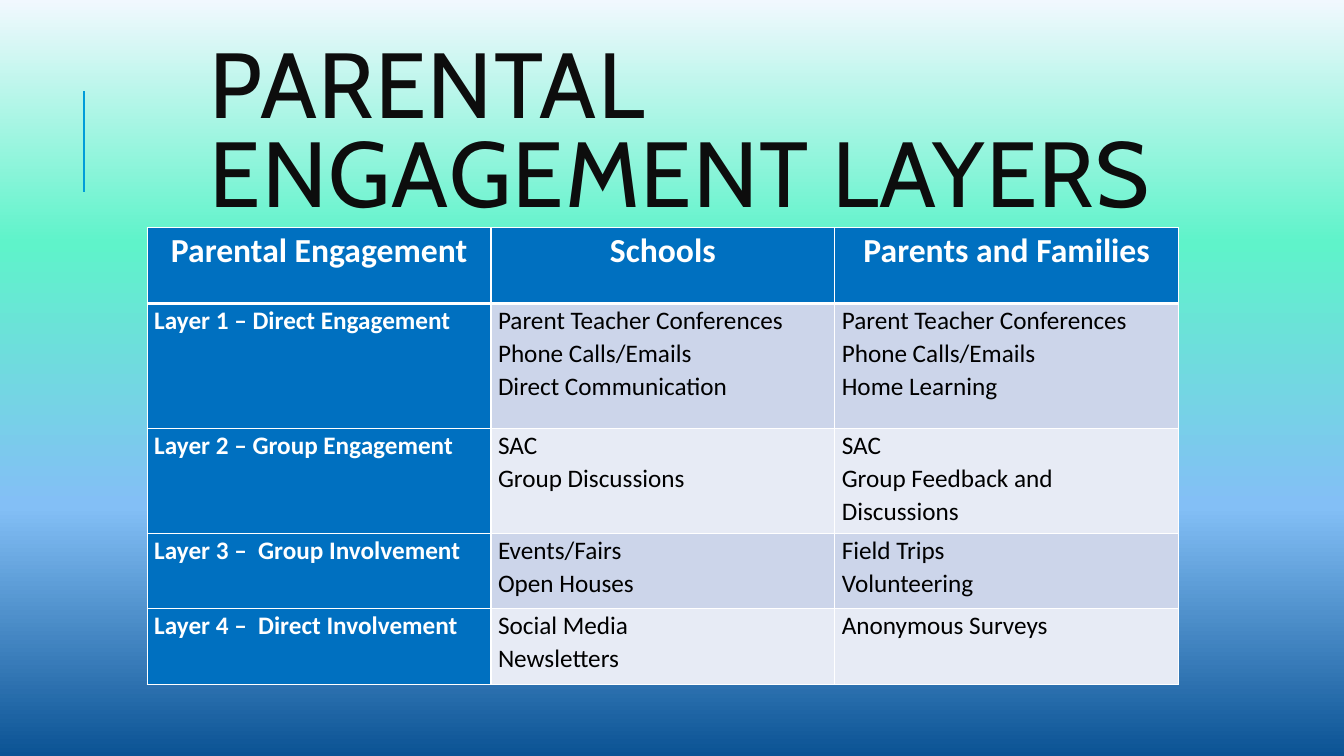
from lxml import etree
from pptx import Presentation
from pptx.dml.color import RGBColor
from pptx.enum.shapes import MSO_CONNECTOR
from pptx.enum.text import MSO_ANCHOR, MSO_AUTO_SIZE, PP_ALIGN
from pptx.oxml.ns import qn
from pptx.util import Inches, Pt

STRAIGHT = MSO_CONNECTOR.STRAIGHT
TOP, MIDDLE = MSO_ANCHOR.TOP, MSO_ANCHOR.MIDDLE
LEFT, CENTER = PP_ALIGN.LEFT, PP_ALIGN.CENTER
NO_AUTOFIT = MSO_AUTO_SIZE.NONE

WHITE = RGBColor(0xFF, 0xFF, 0xFF)
BLACK = RGBColor(0x00, 0x00, 0x00)
TITLE_INK = RGBColor(0x0D, 0x0D, 0x0D)
ACCENT = RGBColor(0x00, 0x9D, 0xD9)
HEADER_BLUE = RGBColor(0x00, 0x70, 0xC0)
BAND_DARK = RGBColor(0xCC, 0xD5, 0xEA)
BAND_LIGHT = RGBColor(0xE7, 0xEB, 0xF5)
SKY_STOPS = [
    (0, RGBColor(0xF1, 0xF8, 0xFE)),
    (32, RGBColor(0x5F, 0xF3, 0xCA)),
    (67, RGBColor(0x83, 0xBF, 0xF6)),
    (100, RGBColor(0x0B, 0x53, 0x94)),
]

COLUMN_WIDTH = 3.41
ROW_HEIGHTS = [0.75, 1.24, 1.04, 0.75, 0.75]
# Each cell is a list of paragraphs.
LAYERS = [
    [["Parental Engagement"], ["Schools"], ["Parents and Families"]],
    [["Layer 1 – Direct Engagement"],
     ["Parent Teacher Conferences Phone Calls/Emails", "Direct Communication"],
     ["Parent Teacher Conferences Phone Calls/Emails", "Home Learning"]],
    [["Layer 2 – Group Engagement"],
     ["SAC", "Group Discussions"],
     ["SAC", "Group Feedback and Discussions"]],
    [["Layer 3 –  Group Involvement"],
     ["Events/Fairs", "Open Houses"],
     ["Field Trips", "Volunteering"]],
    [["Layer 4 –  Direct Involvement"],
     ["Social Media", "Newsletters"],
     ["Anonymous Surveys"]],
]


def add_border(cell, side, points):
    properties = cell._tc.get_or_add_tcPr()
    border = etree.SubElement(properties, qn(f"a:ln{side}"), w=str(Pt(points)))
    solid = etree.SubElement(border, qn("a:solidFill"))
    etree.SubElement(solid, qn("a:srgbClr"), val=str(WHITE))


prs = Presentation()
prs.slide_width = Inches(13.33)
prs.slide_height = Inches(7.5)
slide = prs.slides.add_slide(prs.slide_layouts[5])

# Background gradient, top to bottom
background = slide.background.fill
background.gradient()
background.gradient_angle = 270
stop_list = slide.element.find(".//" + qn("a:gsLst"))
for default_stop in list(stop_list):
    stop_list.remove(default_stop)
for percent, color in SKY_STOPS:
    stop = etree.SubElement(stop_list, qn("a:gs"), pos=str(percent * 1000))
    etree.SubElement(stop, qn("a:srgbClr"), val=str(color))

# Accent line
accent_line = slide.shapes.add_connector(
    STRAIGHT, Inches(0.83), Inches(1.9), Inches(0.83), Inches(0.9))
accent_line.line.color.rgb = ACCENT
accent_line.line.width = Pt(1.5)
etree.SubElement(accent_line._element.spPr, qn("a:effectLst"))

# Title
title = slide.shapes.title
title.left, title.top = Inches(1.98), Inches(0.53)
title.width, title.height = Inches(10.63), Inches(1.64)
title_frame = title.text_frame
title_frame.word_wrap = True
title_frame.auto_size = NO_AUTOFIT
title_frame.vertical_anchor = MIDDLE
heading = title_frame.paragraphs[0]
heading.alignment = LEFT
heading.line_spacing = 0.8
heading_run = heading.add_run()
heading_run.text = "PARENTAL ENGAGEMENT LAYERS"
heading_run.font.name = "Cabin"
heading_run.font.size = Pt(66)
heading_run.font.color.rgb = TITLE_INK
heading_run._r.get_or_add_rPr().set("spc", "100")

# Table of layers
table = slide.shapes.add_table(
    len(LAYERS), 3, Inches(1.46), Inches(2.26),
    Inches(3 * COLUMN_WIDTH), Inches(sum(ROW_HEIGHTS))).table
table.first_col = True
for column in table.columns:
    column.width = Inches(COLUMN_WIDTH)

for r, layer in enumerate(LAYERS):
    table.rows[r].height = Inches(ROW_HEIGHTS[r])
    for c, lines in enumerate(layer):
        cell = table.cell(r, c)
        is_header = r == 0
        is_label = is_header or c == 0
        cell.margin_left = cell.margin_right = Inches(0.07)
        cell.margin_top = cell.margin_bottom = Inches(0)
        cell.vertical_anchor = TOP
        add_border(cell, "L", 1)
        add_border(cell, "R", 1)
        add_border(cell, "T", 3 if r == 1 else 1)
        add_border(cell, "B", 3 if is_header else 1)
        cell.fill.solid()
        band = BAND_DARK if r % 2 else BAND_LIGHT
        cell.fill.fore_color.rgb = HEADER_BLUE if is_label else band
        for i, line in enumerate(lines):
            frame = cell.text_frame
            paragraph = frame.add_paragraph() if i else frame.paragraphs[0]
            paragraph.alignment = CENTER if is_header else LEFT
            paragraph.line_spacing = 1.07
            run = paragraph.add_run()
            run.text = line
            run.font.name = "Calibri"
            run.font.size = Pt(24 if is_header else 18)
            run.font.bold = is_label
            run.font.color.rgb = WHITE if is_label else BLACK

prs.save("out.pptx")
